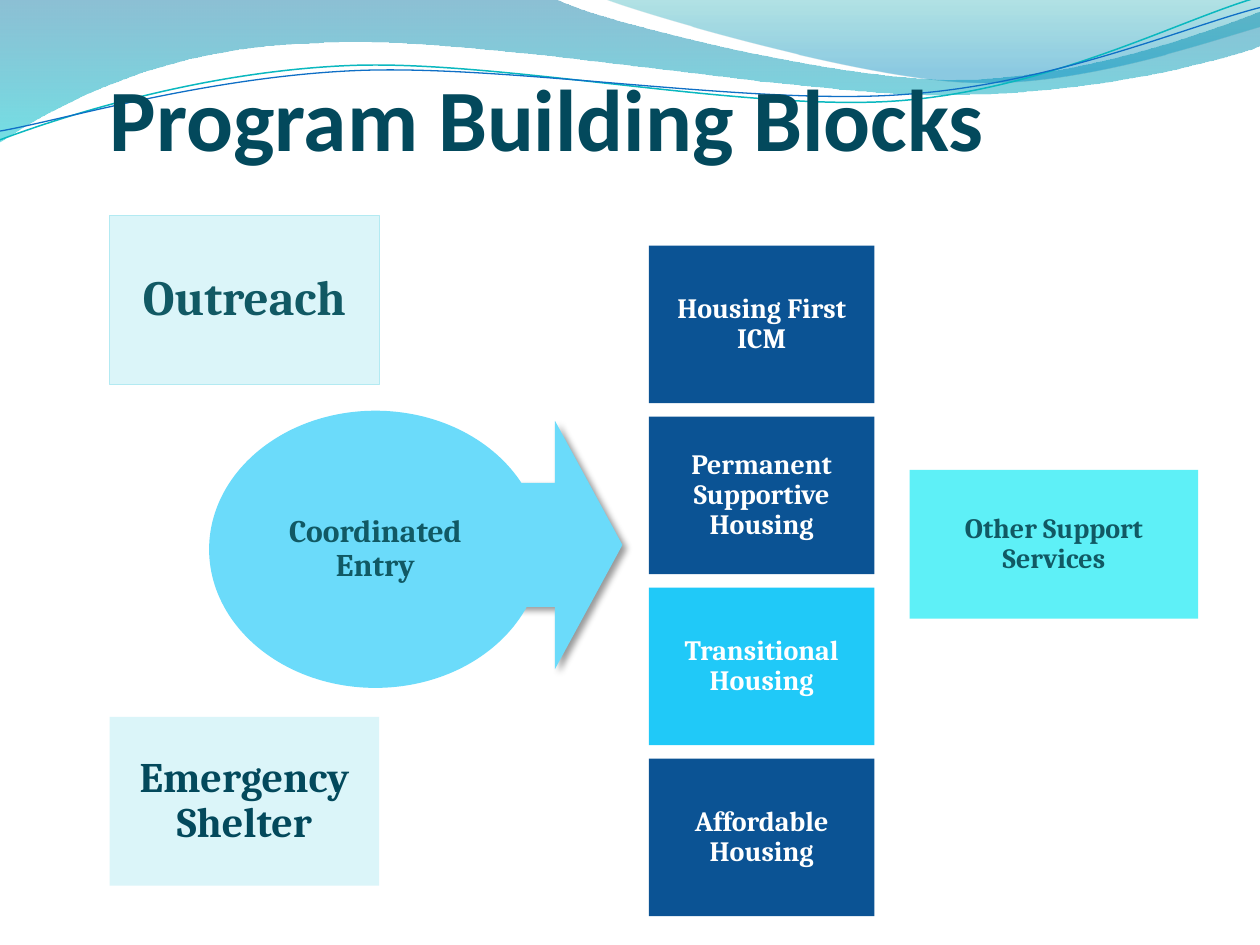
from dataclasses import dataclass
from math import cos, radians, sin
from typing import Optional

from lxml import etree
from pptx import Presentation
from pptx.dml.color import RGBColor
from pptx.enum.shapes import MSO_SHAPE
from pptx.enum.text import MSO_ANCHOR, PP_ALIGN
from pptx.oxml.ns import qn
from pptx.util import Inches, Pt

RECTANGLE, ELLIPSE, ARROW = MSO_SHAPE.RECTANGLE, MSO_SHAPE.OVAL, MSO_SHAPE.RIGHT_ARROW
MIDDLE, BOTTOM = MSO_ANCHOR.MIDDLE, MSO_ANCHOR.BOTTOM
LEFT, CENTER = PP_ALIGN.LEFT, PP_ALIGN.CENTER

WIDTH, HEIGHT = Inches(10), Inches(7.5)
COLUMN, ROW = WIDTH / 100, HEIGHT / 75

COLORS = {
    "title": "03495C", "teal": "115964", "white": "FFFFFF",
    "navy": "0B5394", "bright": "20C9F8", "sky": "6BDBFA",
    "aqua": "5EF0F7", "pale": "DBF5F9", "pale_edge": "B3EAF2",
    "wave_blue": "0074A1", "wave_cyan": "00C6CF",
    "crest_teal": "00A1A9", "crest_blue": "008BBF",
    "line_teal": "0AB8BF", "line_blue": "0F6FC6", "shadow": "000000",
}


@dataclass
class Block:
    label: str
    column: float
    row: float
    columns: float
    rows: float
    fill: str
    ink: str = "teal"
    size: float = 16
    edge: Optional[str] = None
    preset: MSO_SHAPE = RECTANGLE


@dataclass
class Stop:
    position: float
    color: str
    opacity: int


@dataclass
class Wave:
    start: tuple
    segments: list
    stops: tuple = ()
    line: Optional[str] = None
    weight: float = 0
    tilt: float = 0
    pivot: tuple = (0, 0)


STACK = [
    ("Housing First ICM", "navy"),
    ("Permanent Supportive Housing", "navy"),
    ("Transitional Housing", "bright"),
    ("Affordable Housing", "navy"),
]
STACK_TOP, STACK_PITCH = 19.5, 13.57

BLOCKS = [
    *(Block(label, 51.5, STACK_TOP + i * STACK_PITCH, 17.9, 12.5, fill, "white")
      for i, (label, fill) in enumerate(STACK)),
    Block("Other Support Services", 72.2, 37.3, 22.9, 11.8, "aqua"),
    Block("Emergency Shelter", 8.7, 56.9, 21.4, 13.4, "pale", "title", 24),
    Block("Outreach", 8.7, 17.1, 21.4, 13.4, "pale", size=28, edge="pale_edge"),
    Block("Coordinated Entry", 16.6, 32.6, 26.4, 22, "sky", size=18, preset=ELLIPSE),
]

WAVES = [
    Wave((0, 0), [
        (44, -0.1), (47.6, 1.7, 66.4, 6.3, 75.8, 6.3), (85.3, 6.3, 95.8, 2.6, 100, 0.9),
        (100.1, 3.6), (98.3, 4.4, 87, 7.6, 74.6, 7.5), (62.2, 7.5, 38.2, 2.8, 25.7, 3.4),
        (12.9, 3.6, 4.6, 8.3, -0.1, 11.3),
    ], (Stop(0, "wave_blue", 45), Stop(1, "wave_cyan", 55))),
    Wave((47.9, -0.1), [
        (50.9, 1.1, 68.2, 6.2, 76.9, 6.5), (85.6, 6.9, 96.1, 3.2, 100, 2.1), (100, 0),
    ], (Stop(0, "crest_teal", 30), Stop(0.8, "crest_blue", 45))),
    Wave((0, 11.1), [
        (4.8, 9.3, 15.8, 5.7, 27.7, 5.2), (39.5, 4.7, 59.3, 8.9, 71.3, 8),
        (83.3, 7.1, 93.8, 1.5, 99.8, -0.2),
    ], line="line_teal", weight=0.85, tilt=-2.7, pivot=(49.9, 5.75)),
    Wave((0, 10.4), [
        (4.7, 9.6, 16.4, 6.1, 28.3, 5.6), (40.3, 5.1, 59.7, 8.4, 71.7, 7.5),
        (83.6, 6.7, 94.1, 2.1, 100, 0.6),
    ], line="line_blue", weight=0.75, tilt=-2.7, pivot=(49.95, 5.9)),
]


def rgb(name: str) -> RGBColor:
    return RGBColor.from_string(COLORS[name])


def place(column: float, row: float, columns: float, rows: float) -> tuple:
    return (round(column * COLUMN), round(row * ROW),
            round(columns * COLUMN), round(rows * ROW))


def level(wave: Wave, x: float, y: float) -> tuple:
    turn = radians(-wave.tilt)
    dx, dy = x - wave.pivot[0], y - wave.pivot[1]
    return (round((wave.pivot[0] + dx * cos(turn) - dy * sin(turn)) * COLUMN),
            round((wave.pivot[1] + dx * sin(turn) + dy * cos(turn)) * ROW))


def bend(shape, segments: list) -> None:
    strokes = iter(list(shape.element.spPr.iter(qn("a:lnTo"))))
    for segment in segments:
        stroke = next(strokes)
        if len(segment) == 2:
            continue
        curve = etree.Element(qn("a:cubicBezTo"))
        stroke.addprevious(curve)
        for part in (stroke, next(strokes), next(strokes)):
            curve.append(part[0])
            part.getparent().remove(part)


def set_outline(shape, color: Optional[str], weight: float = 0.75) -> None:
    if color:
        shape.line.color.rgb = rgb(color)
        shape.line.width = Pt(weight)
    else:
        shape.line.fill.background()


def draw_wave(shapes, wave: Wave) -> None:
    builder = shapes.build_freeform(*level(wave, *wave.start), scale=1.0)
    points = [level(wave, *pair) for segment in wave.segments
              for pair in zip(segment[::2], segment[1::2])]
    builder.add_line_segments(points, close=False)
    shape = builder.convert_to_shape()
    bend(shape, wave.segments)
    shape.rotation = wave.tilt
    shape.shadow.inherit = False
    set_outline(shape, wave.line, wave.weight)
    if not wave.stops:
        shape.fill.background()
        return
    outline = next(shape.element.spPr.iter(qn("a:path")))
    etree.SubElement(outline, qn("a:close"))
    shape.fill.gradient()
    shape.fill.gradient_angle = 270
    for target, stop in zip(shape.fill.gradient_stops, wave.stops):
        target.position = stop.position
        target.color.rgb = rgb(stop.color)
    for color, stop in zip(shape.element.spPr.iter(qn("a:srgbClr")), wave.stops):
        etree.SubElement(color, qn("a:alpha"), val=str(stop.opacity * 1000))


def draw_preset(shapes, preset, box: tuple, fill: str, edge: Optional[str] = None):
    shape = shapes.add_shape(preset, *box)
    shape.shadow.inherit = False
    shape.fill.solid()
    shape.fill.fore_color.rgb = rgb(fill)
    set_outline(shape, edge)
    return shape


def add_shadow(shape) -> None:
    effects = shape.element.spPr.find(qn("a:effectLst"))
    shadow = etree.SubElement(effects, qn("a:outerShdw"), blurRad=str(Pt(4)),
                              dist=str(Pt(3)), dir=str(45 * 60000), rotWithShape="0")
    color = etree.SubElement(shadow, qn("a:srgbClr"), val=COLORS["shadow"])
    etree.SubElement(color, qn("a:alpha"), val="40000")


def write(shape, text: str, *, font: str, size: float, color: str, align=CENTER,
          anchor=MIDDLE, insets: tuple = (0.1, 0.1, 0.1, 0.1), spacing: float = 0.9) -> None:
    frame = shape.text_frame
    frame.word_wrap = True
    frame.vertical_anchor = anchor
    (frame.margin_left, frame.margin_top,
     frame.margin_right, frame.margin_bottom) = map(Inches, insets)
    paragraph = frame.paragraphs[0]
    paragraph.alignment = align
    paragraph.line_spacing = spacing
    run = paragraph.add_run()
    run.text = text
    run.font.name = font
    run.font.size = Pt(size)
    run.font.bold = True
    run.font.color.rgb = rgb(color)


def main() -> None:
    deck = Presentation()
    deck.slide_width, deck.slide_height = WIDTH, HEIGHT
    shapes = deck.slides.add_slide(deck.slide_layouts[6]).shapes
    for wave in WAVES:
        draw_wave(shapes, wave)
    add_shadow(draw_preset(shapes, ARROW, place(38.7, 33.4, 10.7, 19.7), "sky"))
    title = shapes.add_textbox(*place(8.7, -0.8, 76.9, 14.2))
    write(title, "Program Building Blocks", font="Calibri", size=50, color="title",
          align=LEFT, anchor=BOTTOM, insets=(0, 0.05, 0, 0), spacing=1.0)
    for block in BLOCKS:
        box = place(block.column, block.row, block.columns, block.rows)
        shape = draw_preset(shapes, block.preset, box, block.fill, block.edge)
        write(shape, block.label, font="Cambria", size=block.size, color=block.ink)
    deck.save("out.pptx")


if __name__ == "__main__":
    main()
